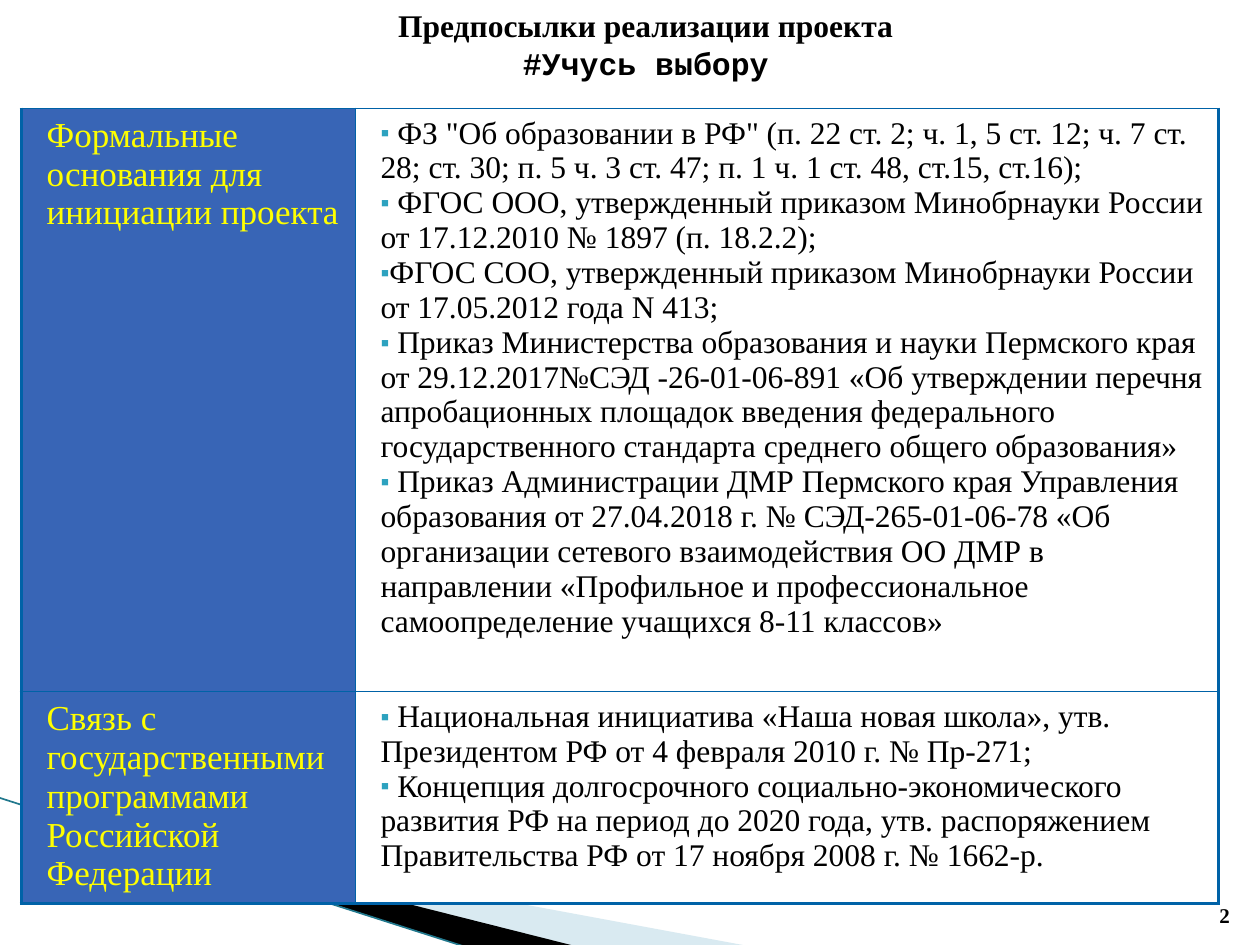
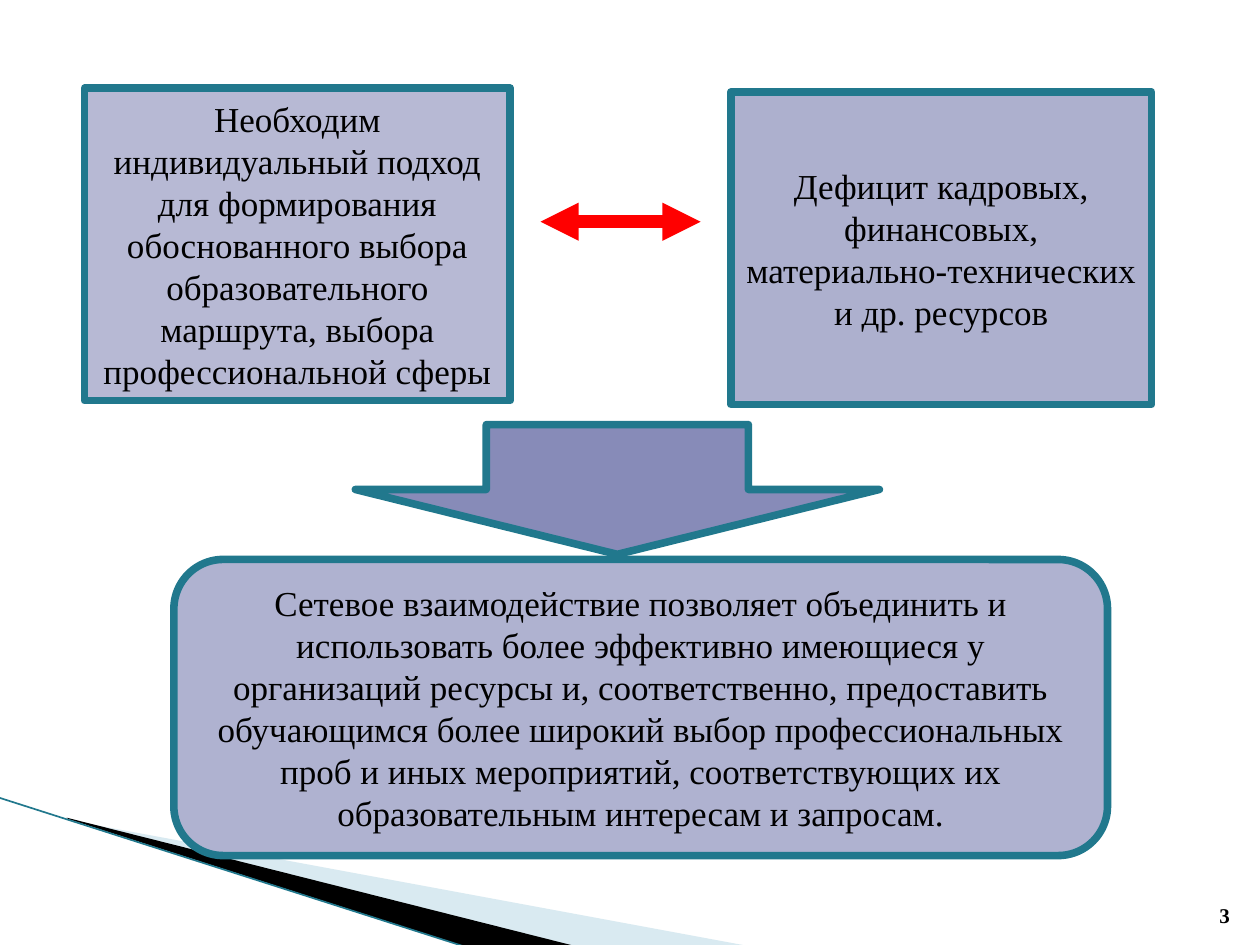
from dataclasses import dataclass

from lxml import etree
from pptx import Presentation
from pptx import util as u
from pptx.dml import color
from pptx.enum import shapes, text
from pptx.oxml import ns


@dataclass(frozen=True)
class Theme:
    serif: str = "Times New Roman"
    mono: str = "Courier New"
    black: str = "000000"
    white: str = "FFFFFF"
    yellow: str = "FFFF00"
    red: str = "FF0000"
    blue: str = "3865B6"
    border: str = "0062A7"
    bullet: str = "2DA2BF"
    teal: str = "21788D"
    sky: str = "A0CBDC"
    violet: str = "878BB8"
    lilac: str = "AFB2D0"
    heading_size: int = 20
    heading_leading: float = 22.2
    body_size: int = 18
    number_size: int = 12


theme = Theme()

# Slide grid: 100 columns by 75 rows
deck = Presentation()
deck.slide_width, deck.slide_height = u.Inches(10), u.Inches(7.5)
COLUMN, ROW = deck.slide_width / 100, deck.slide_height / 75


def place(*lengths):
    """Turn alternating columns and rows into slide lengths."""
    return [round(n * (ROW if i % 2 else COLUMN)) for i, n in enumerate(lengths)]


def write(frame, lines, ink=theme.black, bulleted=False, align=text.PP_ALIGN.LEFT,
          spacing=None, **format_values):
    """Fill a text frame with one paragraph per line."""
    frame.word_wrap = True
    font_values = {"name": theme.serif, "bold": False, **format_values}
    for i, line in enumerate(lines):
        para = frame.paragraphs[0] if i == 0 else frame.add_paragraph()
        para.alignment = align
        para.line_spacing = spacing
        if bulleted:
            props = para._p.get_or_add_pPr()
            bullet_color = etree.SubElement(props, ns.qn("a:buClr"))
            etree.SubElement(bullet_color, ns.qn("a:srgbClr"), val=theme.bullet)
            etree.SubElement(props, ns.qn("a:buSzPct"), val="80000")
            etree.SubElement(props, ns.qn("a:buFont"), typeface=theme.serif)
            etree.SubElement(props, ns.qn("a:buChar"), char="▪")
        span = para.add_run()
        span.text = line
        for name, value in font_values.items():
            setattr(span.font, name, value)
        span.font.color.rgb = color.RGBColor.from_string(ink)


# Shared backdrop: two wedges, a thin line and the slide number
wedges = [
    ([(5.5, 65.1), (59.5, 75.1), (45.6, 75.1), (5.5, 65)], theme.sky, 40),
    ([(5.3, 64.9), (45.7, 75.1), (37.2, 75.2), (5.4, 65)], theme.black, 100),
]
pages = [deck.slides.add_slide(deck.slide_layouts[6]) for _ in range(2)]
for number, page in enumerate(pages, start=2):
    for points, fill_color, opacity in wedges:
        corners = [place(*point) for point in points]
        builder = page.shapes.build_freeform(*corners[0])
        builder.add_line_segments(corners[1:], close=True)
        wedge = builder.convert_to_shape()
        wedge.shadow.inherit = False
        wedge.line.fill.background()
        wedge.fill.solid()
        wedge.fill.fore_color.rgb = color.RGBColor.from_string(fill_color)
        tint = wedge._element.spPr.find(".//" + ns.qn("a:srgbClr"))
        etree.SubElement(tint, ns.qn("a:alpha"), val=str(opacity * 1000))
    edge = page.shapes.add_connector(shapes.MSO_CONNECTOR.STRAIGHT,
                                     *place(-0.1, 63.3, 37.1, 75.2))
    edge.line.width = u.Pt(0.95)
    edge.line.color.rgb = color.RGBColor.from_string(theme.teal)
    etree.SubElement(edge._element.spPr, ns.qn("a:effectLst"))
    number_box = page.shapes.add_textbox(*place(94.6, 70.1, 4, 4))
    number_box.text_frame.vertical_anchor = text.MSO_ANCHOR.BOTTOM
    write(number_box.text_frame, [str(number)], align=text.PP_ALIGN.RIGHT,
          size=u.Pt(theme.number_size), bold=True)

grounds_page, network_page = pages

# Grounds: table of headings and documents
grounds = [
    ("Формальные основания для инициации проекта", [
        " ФЗ \"Об образовании в РФ\" (п. 22 ст. 2; ч. 1, 5 ст. 12; ч. 7 ст. 28; "
        "ст. 30; п. 5 ч. 3 ст. 47; п. 1 ч. 1 ст. 48, ст.15, ст.16);",
        " ФГОС ООО, утвержденный приказом Минобрнауки России от 17.12.2010 "
        "№ 1897 (п. 18.2.2);",
        "ФГОС СОО, утвержденный приказом Минобрнауки России от 17.05.2012 "
        "года N 413;",
        " Приказ Министерства образования и науки Пермского края от "
        "29.12.2017№СЭД -26-01-06-891 «Об утверждении перечня апробационных "
        "площадок введения федерального государственного стандарта среднего "
        "общего образования»",
        " Приказ Администрации ДМР Пермского края Управления образования от "
        "27.04.2018 г. № СЭД-265-01-06-78 «Об организации сетевого "
        "взаимодействия ОО ДМР в направлении «Профильное и профессиональное "
        "самоопределение учащихся 8-11 классов»",
    ]),
    ("Связь с государственными программами Российской Федерации", [
        " Национальная инициатива «Наша новая школа», утв. Президентом РФ "
        "от 4 февраля 2010 г. № Пр-271;",
        " Концепция долгосрочного социально-экономического развития РФ на "
        "период до 2020 года, утв. распоряжением Правительства РФ от "
        "17 ноября 2008 г. № 1662-р.",
    ]),
]
column_widths, row_heights = (26.5, 68.5), (46.3, 16.8)
table = grounds_page.shapes.add_table(
    2, 2, *place(1.7, 8.6, sum(column_widths), sum(row_heights))).table
table.first_row = table.horz_banding = False
for column, width in zip(table.columns, column_widths):
    column.width = round(width * COLUMN)
cell_margins = {"margin_left": u.Inches(0.11), "margin_right": u.Inches(0.11),
                "margin_top": u.Inches(0.06), "margin_bottom": u.Inches(0.06)}
for r, (heading, documents) in enumerate(grounds):
    table.rows[r].height = round(row_heights[r] * ROW)
    for c in range(2):
        cell = table.cell(r, c)
        for name, value in cell_margins.items():
            setattr(cell, name, value)
        # Outer sides are heavier than inner ones, except the top
        sides = {"L": c == 0, "R": c == 1, "T": False, "B": r == 1}
        for side, heavy in sides.items():
            border = etree.SubElement(cell._tc.get_or_add_tcPr(), ns.qn("a:ln" + side),
                                      w=str(u.Pt(2.25 if heavy else 1)))
            paint = etree.SubElement(border, ns.qn("a:solidFill"))
            etree.SubElement(paint, ns.qn("a:srgbClr"), val=theme.border)
        cell.fill.solid()
        cell.fill.fore_color.rgb = color.RGBColor.from_string(
            theme.white if c else theme.blue)
        if c:
            write(cell.text_frame, documents, bulleted=True, size=u.Pt(theme.body_size))
        else:
            write(cell.text_frame, [heading], theme.yellow,
                  spacing=u.Pt(theme.heading_leading), size=u.Pt(theme.heading_size))
        for para in cell.text_frame.paragraphs:
            props = para._p.get_or_add_pPr()
            props.set("marL", str(u.Inches(0.09)))
            props.set("indent", "0")

# Grounds: title
title = grounds_page.shapes.add_textbox(*place(17.5, 0, 67.5, 7.1))
write(title.text_frame, ["Предпосылки реализации проекта", "#Учусь выбору"],
      align=text.PP_ALIGN.CENTER, size=u.Pt(theme.body_size), bold=True)
title.text_frame.paragraphs[1].runs[0].font.name = theme.mono

# Network: need and shortage lead down to cooperation
kinds = shapes.MSO_SHAPE
blocks = [
    (kinds.RECTANGLE, (6.7, 7, 33.8, 24.8), theme.violet, 60,
     "Необходим индивидуальный подход для формирования обоснованного выбора "
     "образовательного маршрута, выбора профессиональной сферы"),
    (kinds.RECTANGLE, (58, 7.3, 33.4, 24.8), theme.violet, 68,
     "Дефицит кадровых, финансовых, материально-технических и др. ресурсов"),
    (kinds.ROUNDED_RECTANGLE, (13.8, 44.4, 74.1, 23.5), theme.lilac, 100,
     "Сетевое взаимодействие позволяет объединить и использовать более "
     "эффективно имеющиеся у организаций ресурсы и, соответственно, "
     "предоставить обучающимся более широкий выбор профессиональных проб и "
     "иных мероприятий, соответствующих их образовательным интересам и "
     "запросам."),
    (kinds.DOWN_ARROW, (28.2, 33.7, 41.6, 10.3), theme.violet, 100, None),
]
for kind, area, fill_color, opacity, words in blocks:
    box = network_page.shapes.add_shape(kind, *place(*area))
    box.shadow.inherit = False
    box.fill.solid()
    box.fill.fore_color.rgb = color.RGBColor.from_string(fill_color)
    tint = box._element.spPr.find(".//" + ns.qn("a:srgbClr"))
    etree.SubElement(tint, ns.qn("a:alpha"), val=str(opacity * 1000))
    box.line.width = u.Pt(4.33)
    box.line.color.rgb = color.RGBColor.from_string(theme.teal)
    if words:
        box.text_frame.vertical_anchor = text.MSO_ANCHOR.MIDDLE
        write(box.text_frame, [words], align=text.PP_ALIGN.CENTER,
              size=u.Pt(theme.heading_size))

# Network: two-way arrow between the upper boxes
tension = network_page.shapes.add_connector(shapes.MSO_CONNECTOR.STRAIGHT,
                                            *place(42.9, 17.6, 55.6, 17.6))
tension.line.width = u.Pt(7.25)
tension.line.color.rgb = color.RGBColor.from_string(theme.red)
for end in ("a:headEnd", "a:tailEnd"):
    etree.SubElement(tension.line._get_or_add_ln(), ns.qn(end), type="triangle")
etree.SubElement(tension._element.spPr, ns.qn("a:effectLst"))

deck.save("out.pptx")
